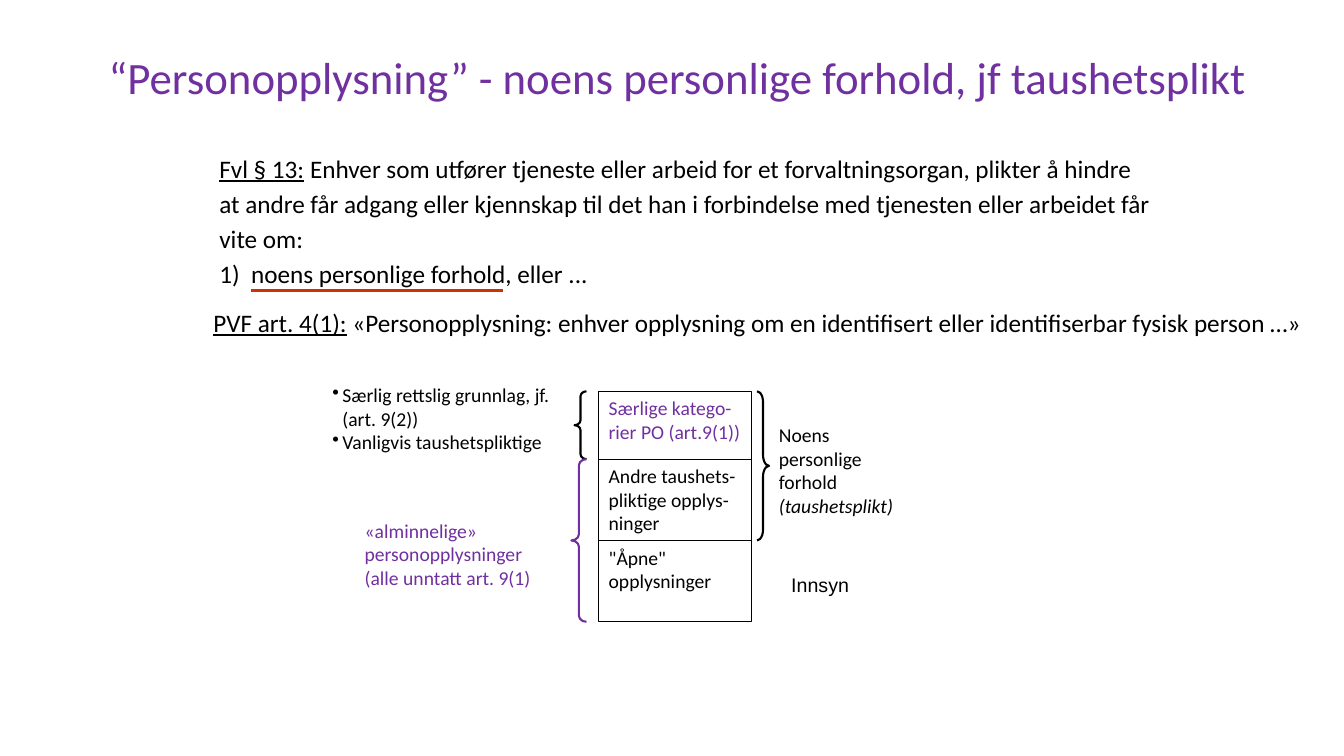
from lxml.etree import SubElement
from pptx import Presentation
from pptx.dml.color import RGBColor
from pptx.enum.shapes import MSO_CONNECTOR, MSO_SHAPE
from pptx.enum.text import MSO_ANCHOR, MSO_AUTO_SIZE, PP_ALIGN
from pptx.oxml.ns import qn
from pptx.util import Cm, Pt

BLACK = RGBColor(0x00, 0x00, 0x00)
WHITE = RGBColor(0xFF, 0xFF, 0xFF)
PURPLE = RGBColor(0x70, 0x30, 0xA0)
RED = RGBColor(0xCC, 0x33, 0x00)

STACK_LEFT, STACK_TOP, STACK_WIDTH = 15.09, 9.86, 3.84
CATEGORIES = [
    (1.71, ["Særlige katego-rier PO (art.9(1))"], PURPLE),
    (2.05, ["Andre taushets-", "pliktige opplys-", "ninger"], BLACK),
    (2.05, ['"Åpne"', "opplysninger"], BLACK),
]
LAW_SPACING = {"line_spacing": 0.7, "space_before": Pt(5), "space_after": Pt(5)}


def set_values(target, values):
    for name, value in values.items():
        setattr(target, name, value)


def write_lines(frame, lines, size, color, name="Calibri", spacing=None):
    for index, line in enumerate(lines):
        paragraph = frame.paragraphs[0] if index == 0 else frame.add_paragraph()
        set_values(paragraph, {"alignment": PP_ALIGN.LEFT, **(spacing or {})})
        runs = [(line, {})] if isinstance(line, str) else line
        for text, style in runs:
            run = paragraph.add_run()
            run.text = text
            set_values(run.font, {"name": name, "size": Pt(size), **style})
            run.font.color.rgb = color


def add_free_text(slide, box, lines, size, color, spacing=None):
    frame = slide.shapes.add_textbox(*map(Cm, box)).text_frame
    set_values(frame, {"word_wrap": False, "auto_size": MSO_AUTO_SIZE.SHAPE_TO_FIT_TEXT})
    write_lines(frame, lines, size, color, spacing=spacing)


def add_panel(slide, box, lines, color=BLACK, name="Calibri", outlined=False):
    shape = slide.shapes.add_shape(MSO_SHAPE.RECTANGLE, *map(Cm, box))
    shape.shadow.inherit = False
    shape.fill.solid()
    shape.fill.fore_color.rgb = WHITE
    if outlined:
        shape.line.color.rgb = BLACK
        shape.line.width = Pt(0.75)
    else:
        shape.line.fill.background()
    set_values(shape.text_frame, {"word_wrap": True, "vertical_anchor": MSO_ANCHOR.TOP})
    write_lines(shape.text_frame, lines, 14, color, name)
    return shape


def add_bullets(shape):
    for paragraph in shape.text_frame.paragraphs:
        properties = paragraph._p.get_or_add_pPr()
        properties.set("marL", str(Cm(0.25)))
        properties.set("indent", str(Cm(-0.25)))
        SubElement(properties, qn("a:buChar")).set("char", "•")


def add_brace(slide, kind, box, curve, color=BLACK):
    brace = slide.shapes.add_shape(kind, *map(Cm, box))
    brace.shadow.inherit = False
    brace.fill.background()
    set_values(brace.line, {"width": Pt(1.5)})
    brace.line.color.rgb = color
    brace.adjustments[0] = curve


def add_underline(slide, left, right, top):
    line = slide.shapes.add_connector(
        MSO_CONNECTOR.STRAIGHT, Cm(left), Cm(top), Cm(right), Cm(top))
    line.line.color.rgb = RED
    line.line.width = Pt(2.25)
    SubElement(line._element.spPr, qn("a:effectLst"))


def add_category_stack(slide):
    top = STACK_TOP
    for height, lines, color in CATEGORIES:
        add_panel(slide, (STACK_LEFT, top, STACK_WIDTH, height), lines, color, outlined=True)
        top += height


def add_braces(slide):
    special, confidential, public = [height for height, _, _ in CATEGORIES]
    add_brace(slide, MSO_SHAPE.RIGHT_BRACE,
              (19.08, STACK_TOP, 0.3, special + confidential), 0.917)
    add_brace(slide, MSO_SHAPE.LEFT_BRACE, (14.48, STACK_TOP, 0.3, special), 0.417)
    add_brace(slide, MSO_SHAPE.LEFT_BRACE,
              (14.4, STACK_TOP + special, 0.38, confidential + public), 0.417, PURPLE)


def main():
    presentation = Presentation()
    set_values(presentation, {"slide_width": Cm(33.87), "slide_height": Cm(19.05)})
    slide = presentation.slides.add_slide(presentation.slide_layouts[6])

    add_free_text(slide, (2.49, 1.14, 29.46, 1.63),
                  ["“Personopplysning” - noens personlige forhold, jf taushetsplikt"],
                  32, PURPLE)
    add_free_text(slide, (5.28, 3.94, 24.28, 3.5), [
        [("Fvl § 13:", {"underline": True}),
         (" Enhver som utfører tjeneste eller arbeid for et forvaltningsorgan, plikter å hindre", {})],
        "at andre får adgang eller kjennskap til det han i forbindelse med tjenesten eller arbeidet får",
        "vite om:",
        "1)  noens personlige forhold, eller ...",
    ], 18, BLACK, LAW_SPACING)
    add_underline(slide, 6.32, 12.67, 7.32)
    add_free_text(slide, (5.13, 7.62, 28.27, 1.02), [
        [("PVF art. 4(1):", {"underline": True}),
         (" «Personopplysning: enhver opplysning om en identifisert eller identifiserbar fysisk person …»", {})],
    ], 18, BLACK)

    add_bullets(add_panel(slide, (8.13, 9.53, 6.35, 3.07), [
        "Særlig rettslig grunnlag, jf. (art. 9(2))", "Vanligvis taushetspliktige"]))
    add_category_stack(slide)
    add_panel(slide, (19.38, 10.54, 3.68, 3.07), [
        "Noens", "personlige", "forhold", [("(taushetsplikt)", {"italic": True})]])
    add_panel(slide, (19.69, 14.3, 3.07, 1.37), ["Innsyn"], name="Arial")
    add_braces(slide)
    add_free_text(slide, (8.94, 12.95, 4.75, 2.06), [
        "«alminnelige»", "personopplysninger", "(alle unntatt art. 9(1)"], 14, PURPLE)

    presentation.save("out.pptx")


if __name__ == "__main__":
    main()
